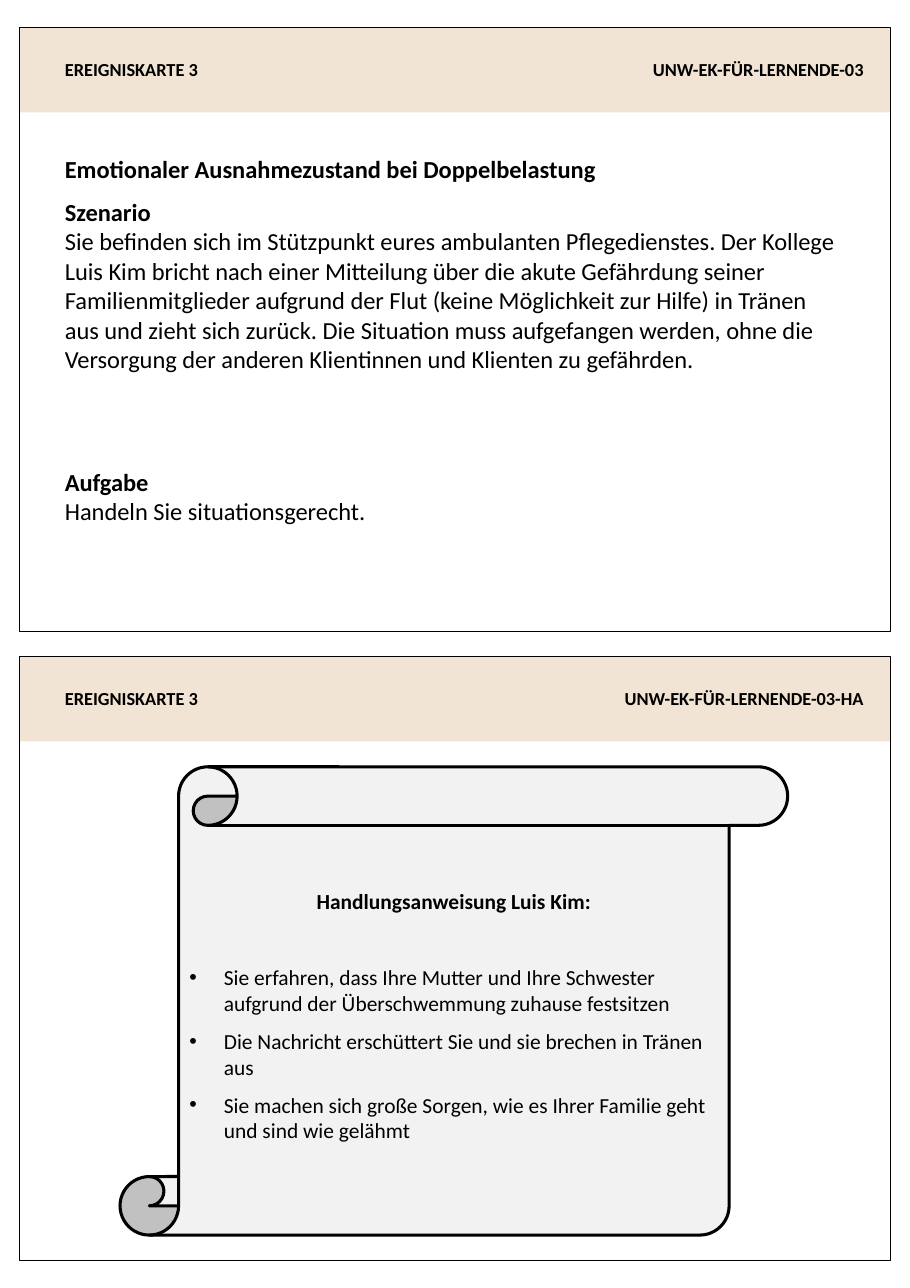
"""Build a page with two event cards for a nursing exercise."""
from dataclasses import dataclass

from lxml import etree
from pptx import Presentation
from pptx import util as u
from pptx.dml import color
from pptx.enum import shapes, text
from pptx.oxml import ns

LEFT, WIDE, HIGH, BAND = 12.96, 568.8, 394.56, 55.44
TOP, STEP = 18, 411.12
EDGE = 35.28
INK, SAND, GREY = "000000", "F2E4D4", "F2F2F2"


@dataclass
class Para:
    words: str
    bold: bool = False
    align: text.PP_ALIGN = text.PP_ALIGN.LEFT
    after: float = 0
    dot: bool = False


@dataclass
class Block:
    x: float
    y: float
    w: float
    h: float
    size: float
    paras: list[Para]


def tint(code: str) -> color.RGBColor:
    return color.RGBColor.from_string(code)


def paint(shape, fill: str | None, line: str | None, width: float = 0.75) -> None:
    shape.shadow.inherit = False
    if fill:
        shape.fill.solid()
        shape.fill.fore_color.rgb = tint(fill)
    else:
        shape.fill.background()
    if line:
        shape.line.color.rgb = tint(line)
        shape.line.width = u.Pt(width)
    else:
        shape.line.fill.background()


def mark(para) -> None:
    props = para._p.get_or_add_pPr()
    props.set("marL", str(u.Pt(22.5)))
    props.set("indent", str(u.Pt(-22.5)))
    etree.SubElement(props, ns.qn("a:buFont")).set("typeface", "Arial")
    etree.SubElement(props, ns.qn("a:buChar")).set("char", "•")


def write(frame, paras: list[Para], size: float) -> None:
    frame.word_wrap = True
    for i, item in enumerate(paras):
        para = frame.add_paragraph() if i else frame.paragraphs[0]
        if item.dot:
            mark(para)
        para.alignment = item.align
        para.space_after = u.Pt(item.after)
        run = para.add_run()
        run.text = item.words
        run.font.name = "Calibri"
        run.font.size = u.Pt(size)
        run.font.bold = item.bold
        run.font.color.rgb = tint(INK)


def place(slide, block: Block) -> None:
    box = slide.shapes.add_textbox(*map(u.Pt, (block.x, block.y, block.w, block.h)))
    write(box.text_frame, block.paras, block.size)
    box.text_frame.auto_size = text.MSO_AUTO_SIZE.SHAPE_TO_FIT_TEXT


def card(slide, top: float, code: str) -> None:
    kind = shapes.MSO_SHAPE.RECTANGLE
    for high, fill, line in ((BAND, SAND, None), (HIGH, None, INK)):
        rect = slide.shapes.add_shape(kind, *map(u.Pt, (LEFT, top, WIDE, high)))
        paint(rect, fill, line)
    y = top + 16.56
    right = text.PP_ALIGN.RIGHT
    place(slide, Block(333.36, y, 238.32, 21.6, 12, [Para(code, True, right)]))
    place(slide, Block(EDGE, y, 250, 21.6, 12, [Para("EREIGNISKARTE 3", True)]))


def scroll(slide, head: str, points: list[str]) -> None:
    kind = shapes.MSO_SHAPE.VERTICAL_SCROLL
    sheet = slide.shapes.add_shape(kind, *map(u.Pt, (78.48, 501.12, 436.32, 306)))
    paint(sheet, GREY, INK, 2)
    sheet.text_frame.vertical_anchor = text.MSO_ANCHOR.MIDDLE
    title = Para(head, True, text.PP_ALIGN.CENTER, 33)
    write(sheet.text_frame, [title] + [Para(p, after=8, dot=True) for p in points], 14)


CODES = ["UNW-EK-FÜR-LERNENDE-03", "UNW-EK-FÜR-LERNENDE-03-HA"]
BLOCKS = [
    Block(EDGE, 97.2, 500.4, 26.64, 16, [
        Para("Emotionaler Ausnahmezustand bei Doppelbelastung", True)]),
    Block(EDGE, 125.28, 522, 123.84, 16, [
        Para("Szenario", True),
        Para("Sie befinden sich im Stützpunkt eures ambulanten Pflegedienstes. "
             "Der Kollege Luis Kim bricht nach einer Mitteilung über die akute "
             "Gefährdung seiner Familienmitglieder aufgrund der Flut (keine "
             "Möglichkeit zur Hilfe) in Tränen aus und zieht sich zurück. Die "
             "Situation muss aufgefangen werden, ohne die Versorgung der anderen "
             "Klientinnen und Klienten zu gefährden.")]),
    Block(EDGE, 301.68, 500.4, 65.52, 16, [
        Para("Aufgabe", True), Para("Handeln Sie situationsgerecht.")]),
]
POINTS = [
    "Sie erfahren, dass Ihre Mutter und Ihre Schwester aufgrund der "
    "Überschwemmung zuhause festsitzen",
    "Die Nachricht erschüttert Sie und sie brechen in Tränen aus",
    "Sie machen sich große Sorgen, wie es Ihrer Familie geht und sind wie gelähmt",
]


def main() -> None:
    deck = Presentation()
    deck.slide_width, deck.slide_height = u.Pt(594.72), u.Pt(841.68)
    slide = deck.slides.add_slide(deck.slide_layouts[6])
    for i, code in enumerate(CODES):
        card(slide, TOP + i * STEP, code)
    for block in BLOCKS:
        place(slide, block)
    scroll(slide, "Handlungsanweisung Luis Kim:", POINTS)
    deck.save("out.pptx")


if __name__ == "__main__":
    main()
